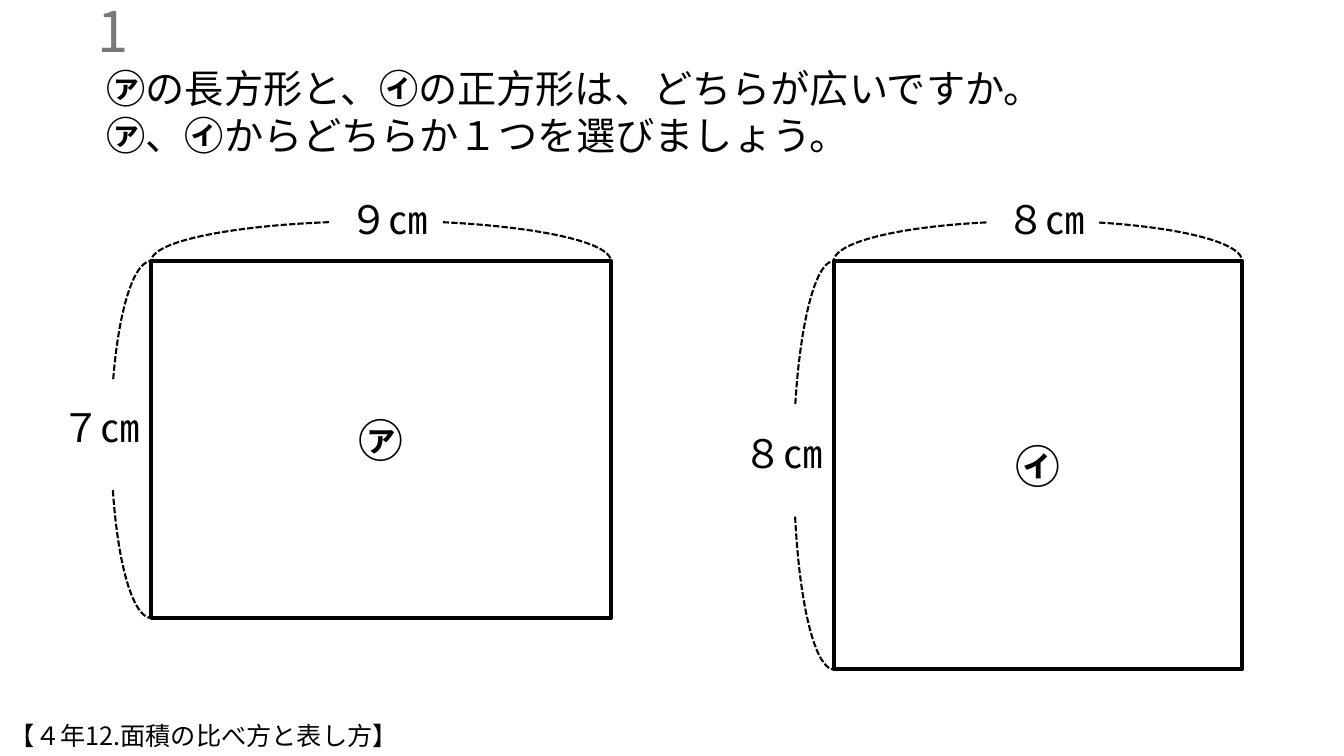
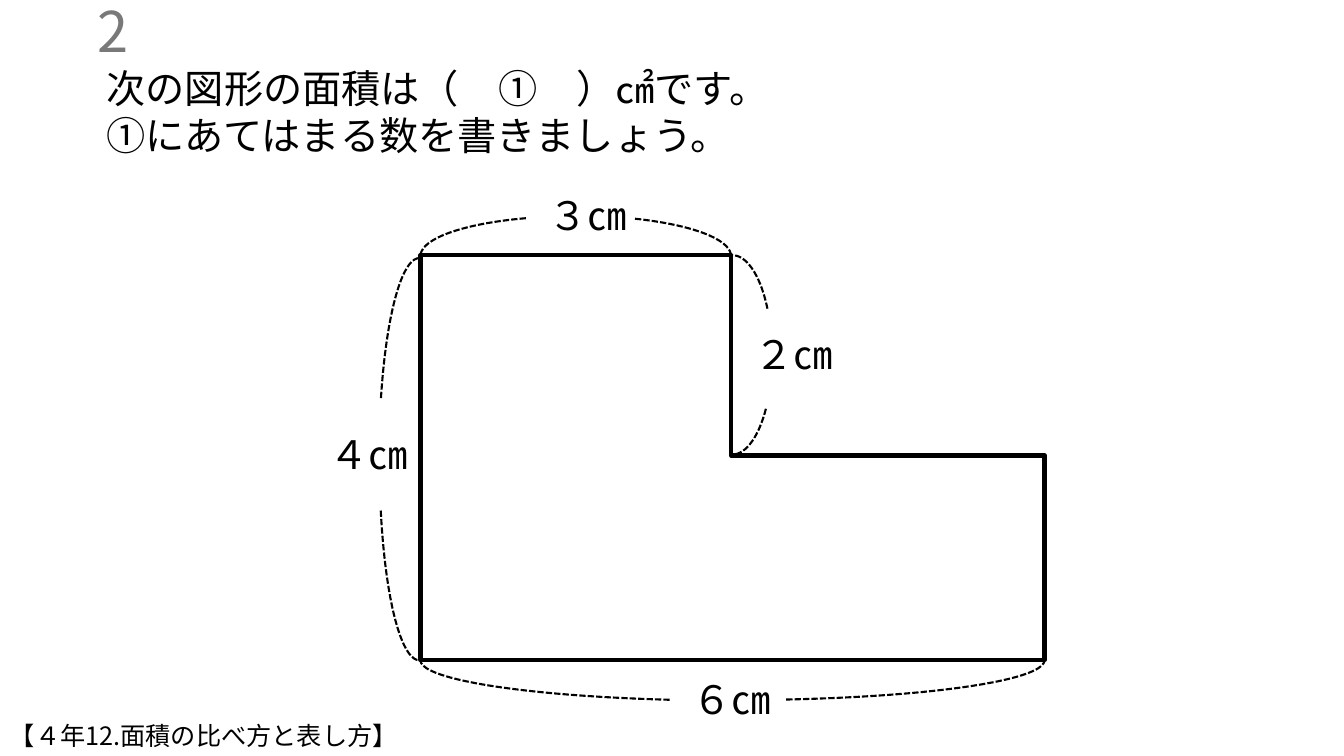
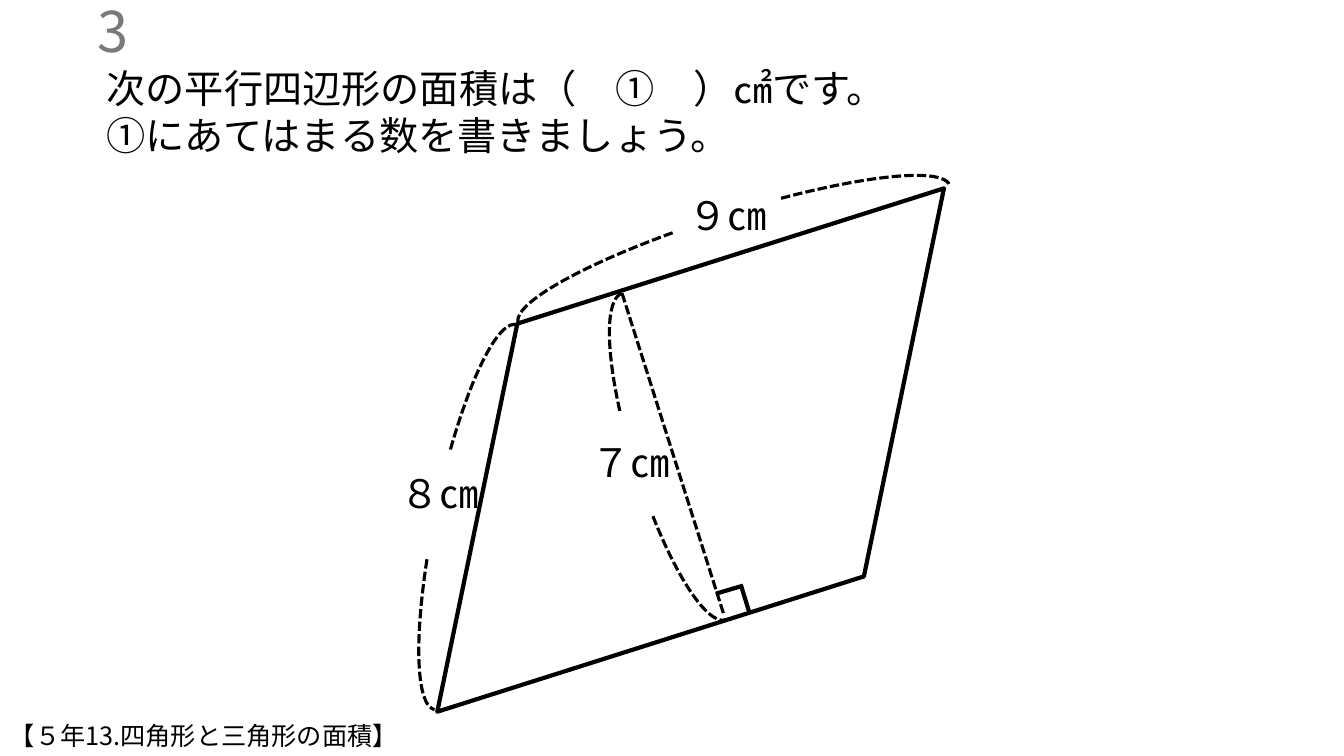
import itertools
import math

import lxml.etree
import pptx
import pptx.dml.color
import pptx.enum.dml
import pptx.enum.shapes
import pptx.enum.text
import pptx.oxml.ns
import pptx.util

Inches = pptx.util.Inches
KIND = pptx.enum.shapes.MSO_SHAPE
ALIGN = pptx.enum.text.PP_ALIGN
ANCHOR = pptx.enum.text.MSO_ANCHOR
DASH = pptx.enum.dml.MSO_LINE.SQUARE_DOT

HUES = {"ink": "000000", "gray": "797979", "page": "FFFFFF"}
FACE = "Noto Sans CJK JP"
BOLD = "㋐㋑"
FORMS = {
    "sign": {"size": pptx.util.Pt(32), "name": FACE},
    "ask": {"size": pptx.util.Pt(28), "name": FACE},
    "count": {"size": pptx.util.Pt(40), "name": FACE},
    "foot": {"size": pptx.util.Pt(18), "name": FACE},
}
COUNT = (0.37, 0.1, 1, 0.4)
ASK = (0.96, 0.59, 11.53, 1.04)
FOOT = (0, 7.1, 7.49, 0.4)
LABEL = (1.18, 0.57)


def tint(key):
    """Return the named colour."""
    return pptx.dml.color.RGBColor.from_string(HUES[key])


def write(shape, lines, form, hue="ink", align=ALIGN.LEFT, anchor=ANCHOR.TOP):
    """Fill a shape with lines of text, with circled signs in bold."""
    frame = shape.text_frame
    frame.word_wrap = True
    frame.vertical_anchor = anchor
    for spot, line in enumerate(lines):
        para = frame.add_paragraph() if spot else frame.paragraphs[0]
        para.alignment = align
        for bold, part in itertools.groupby(line, lambda sign: sign in BOLD):
            run = para.add_run()
            run.text = "".join(part)
            for key, value in {**FORMS[form], "bold": bold}.items():
                setattr(run.font, key, value)
            run.font.color.rgb = tint(hue)
            east = lxml.etree.SubElement(run._r.get_or_add_rPr(), pptx.oxml.ns.qn("a:ea"))
            east.set("typeface", FACE)


def note(slide, box, lines, form, **style):
    """Add a text box."""
    write(slide.shapes.add_textbox(*map(Inches, box)), lines, form, **style)


def stroke(line, width, dash=None):
    """Style a line or an outline."""
    line.color.rgb = tint("ink")
    values = {"width": pptx.util.Pt(width), "dash_style": dash}
    for key, value in values.items():
        setattr(line, key, value)


def outline(shapes, kind, box, width=3, dash=None, turn=0, bends=()):
    """Add an unfilled preset shape."""
    shape = shapes.add_shape(kind, *map(Inches, box))
    shape.shadow.inherit = False
    shape.fill.background()
    stroke(shape.line, width, dash)
    shape.rotation = turn % 360
    for spot, bend in enumerate(bends):
        shape.adjustments[spot] = bend
    return shape


def rule(slide, box, ends, width, dash=None):
    """Add a straight line with its ends measured from the box corner."""
    left, top = box[:2]
    x1, y1, x2, y2 = ends
    spots = map(Inches, (left + x1, top + y1, left + x2, top + y2))
    line = slide.shapes.add_connector(pptx.enum.shapes.MSO_CONNECTOR.STRAIGHT, *spots)
    stroke(line.line, width, dash)
    lxml.etree.SubElement(line._element.spPr, pptx.oxml.ns.qn("a:effectLst"))


def brace(slide, box, ends, width=1.5, depth=0.8):
    """Add a dashed pair of arcs that bulges to the left of its direction."""
    x1, y1, x2, y2 = ends
    span = math.hypot(x2 - x1, y2 - y1)
    angle = math.atan2(y2 - y1, x2 - x1)
    pair = slide.shapes.add_group_shape().shapes
    for flip, part, bend in ((False, 1, 196.706), (True, 0.987, 193.003)):
        wide, high = span * part, depth * part
        shift = (wide - span) / 2
        left = box[0] + (x1 + x2 - wide) / 2 + shift * math.cos(angle)
        top = box[1] + (y1 + y2 - high) / 2 + shift * math.sin(angle)
        arc = outline(pair, KIND.ARC, (left, top, wide, high), width, DASH,
                      math.degrees(angle), (bend, 0))
        if flip:
            arc._element.spPr.xfrm.set("flipH", "1")


def sizes(slide, box, marks, width=1.5):
    """Add braces and their lengths, measured from the box corner."""
    for ends, text, (x, y) in marks:
        brace(slide, box, ends, width)
        note(slide, (box[0] + x, box[1] + y, *LABEL), [text], "ask")


def panel(slide, box, sign, top, side):
    """Draw a signed rectangle with its width and height."""
    wide, high = box[2:]
    shape = outline(slide.shapes, KIND.RECTANGLE, box)
    write(shape, [sign], "sign", align=ALIGN.CENTER, anchor=ANCHOR.MIDDLE)
    sizes(slide, box, [
        ((0, 0, wide, 0), top, (wide / 2 - 0.41, -0.7)),
        ((0, high, 0, 0), side, (-0.99, high / 2 - 0.41)),
    ])


def pair(slide):
    """Draw the rectangle and the square."""
    panel(slide, (1.5, 2.59, 4.56, 3.54), "㋐", "９㎝", "７㎝")
    panel(slide, (8.27, 2.59, 4.05, 4.05), "㋑", "８㎝", "８㎝")


def corner(slide, box=(4.17, 2.53, 6.19, 4.02)):
    """Draw the L figure with its four lengths."""
    wide, high = box[2:]
    arm = 3.08
    sizes(slide, box, [
        ((0, 0.01, arm, 0.01), "３㎝", (1.17, -0.68)),
        ((-0.01, high, -0.01, 0.03), "４㎝", (-1, 1.69)),
        ((arm + 0.01, 0, arm + 0.01, 1.98), "２㎝", (3.21, 0.7)),
        ((wide, high, 0, high), "６㎝", (2.6, 4.12)),
    ])
    outline(slide.shapes, KIND.CORNER, box, bends=(0.505, 0.767))


def slant(slide, box=(3.67, 2.75, 6.36, 3.43)):
    """Draw the parallelogram with its height and right angle."""
    outline(slide.shapes, KIND.PARALLELOGRAM, box, turn=342.4, bends=(0.56,))
    rule(slide, box, (2.5, 0.16, 3.51, 3.35), 2.25, DASH)
    for ends in ((3.43, 3.14, 3.7, 3.06), (3.68, 3.06, 3.76, 3.32)):
        rule(slide, box, ends, 3)
    sizes(slide, box, [
        ((1.47, 0.45, 5.75, -0.91), "９㎝", (3.06, -0.9)),
        ((0.64, 4.29, 1.45, 0.47), "８㎝", (0.2, 1.86)),
        ((3.53, 3.4, 2.5, 0.16), "７㎝", (2.1, 1.55)),
    ], 2.25)


def page(deck, count, lines, foot, draw):
    """Add a slide with its number, question, figure and footer."""
    slide = deck.slides.add_slide(deck.slide_layouts[6])
    slide.background.fill.solid()
    slide.background.fill.fore_color.rgb = tint("page")
    draw(slide)
    note(slide, COUNT, [str(count)], "count", hue="gray",
         align=ALIGN.RIGHT, anchor=ANCHOR.MIDDLE)
    note(slide, ASK, lines, "ask")
    note(slide, FOOT, [foot], "foot")


def main():
    """Build and save the deck."""
    deck = pptx.Presentation()
    deck.slide_width, deck.slide_height = Inches(13.33), Inches(7.5)
    four = "【４年12.面積の比べ方と表し方】"
    five = "【５年13.四角形と三角形の面積】"
    fill = "①にあてはまる数を書きましょう。"
    pages = [
        (["㋐の長方形と、㋑の正方形は、どちらが広いですか。",
          "㋐、㋑からどちらか１つを選びましょう。"], four, pair),
        (["次の図形の面積は（　①　）㎠です。", fill], four, corner),
        (["次の平行四辺形の面積は（　①　）㎠です。", fill], five, slant),
    ]
    for count, (lines, foot, draw) in enumerate(pages, 1):
        page(deck, count, lines, foot, draw)
    deck.save("out.pptx")


if __name__ == "__main__":
    main()
